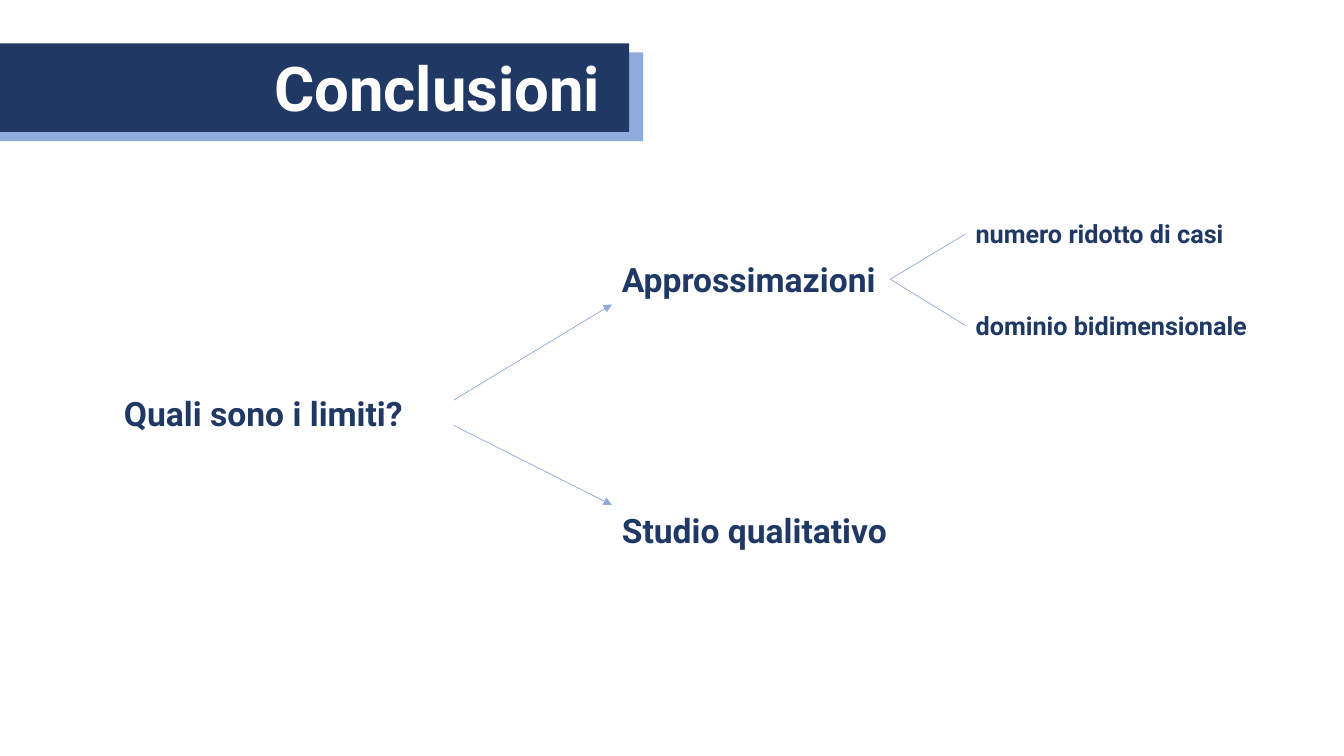
from dataclasses import dataclass

from lxml import etree
from pptx import Presentation
from pptx import util as u
from pptx.dml.color import RGBColor
from pptx.enum import shapes, text
from pptx.oxml import ns
from pptx.shapes.base import BaseShape
from pptx.slide import Slide

SLIDE_W, SLIDE_H = u.Inches(13.33), u.Inches(7.5)


@dataclass(frozen=True)
class Theme:
    font: str = "Roboto"
    navy: RGBColor = RGBColor(0x20, 0x38, 0x64)
    sky: RGBColor = RGBColor(0x8F, 0xAA, 0xDC)
    white: RGBColor = RGBColor(0xFF, 0xFF, 0xFF)
    title_size: int = 44
    topic_size: int = 24
    detail_size: int = 18
    line_width: float = 0.5


THEME = Theme()


@dataclass(frozen=True)
class Point:
    x: float
    y: float


@dataclass(frozen=True)
class Box:
    x: float
    y: float
    w: float
    h: float

    @property
    def middle_left(self) -> Point:
        return Point(self.x, self.y + self.h / 2)

    @property
    def middle_right(self) -> Point:
        return Point(self.x + self.w, self.y + self.h / 2)


@dataclass(frozen=True)
class Bar:
    box: Box
    color: RGBColor


@dataclass(frozen=True)
class Label:
    words: str
    box: Box
    size: int


@dataclass(frozen=True)
class Link:
    start: Point
    end: Point
    arrow: bool = False


def across(share: float) -> int:
    return round(SLIDE_W * share / 100)


def down(share: float) -> int:
    return round(SLIDE_H * share / 100)


def place(sp: BaseShape, box: Box) -> None:
    sp.left, sp.top = across(box.x), down(box.y)
    sp.width, sp.height = across(box.w), down(box.h)


def write(sp: BaseShape, words: str, size: int, color: RGBColor, wrap: bool) -> None:
    tf = sp.text_frame
    tf.text = words
    tf.word_wrap = wrap
    tf.auto_size = text.MSO_AUTO_SIZE.SHAPE_TO_FIT_TEXT
    tf.vertical_anchor = text.MSO_ANCHOR.TOP
    p = tf.paragraphs[0]
    p.alignment = text.PP_ALIGN.LEFT
    p.line_spacing = 1.0
    p.space_before = u.Pt(0)
    font = p.runs[0].font
    font.name, font.size, font.bold = THEME.font, u.Pt(size), True
    font.color.rgb = color


def draw_bar(s: Slide, bar: Bar) -> None:
    sp = s.shapes.add_shape(shapes.MSO_SHAPE.RECTANGLE, 0, 0, 0, 0)
    place(sp, bar.box)
    sp.shadow.inherit = False
    sp.fill.solid()
    sp.fill.fore_color.rgb = bar.color
    sp.line.fill.background()


def draw_title(s: Slide, label: Label) -> None:
    sp = s.shapes.title
    place(sp, label.box)
    write(sp, label.words, label.size, THEME.white, wrap=True)
    sp.element.getparent().append(sp.element)


def draw_label(s: Slide, label: Label) -> None:
    sp = s.shapes.add_textbox(0, 0, 0, 0)
    write(sp, label.words, label.size, THEME.navy, wrap=False)
    place(sp, label.box)


def draw_link(s: Slide, link: Link) -> None:
    cxn = s.shapes.add_connector(
        shapes.MSO_CONNECTOR.STRAIGHT,
        across(link.start.x), down(link.start.y),
        across(link.end.x), down(link.end.y),
    )
    cxn.line.color.rgb = THEME.sky
    cxn.line.width = u.Pt(THEME.line_width)
    props = cxn.element.spPr
    if link.arrow:
        etree.SubElement(props.find(ns.qn("a:ln")), ns.qn("a:tailEnd"), type="triangle")
    etree.SubElement(props, ns.qn("a:effectLst"))


TOPIC_X, DETAIL_X, FORK_X = 45.53, 71.85, 33.75
TOPIC_H, DETAIL_H, BAR_H = 6.67, 5.33, 11.73

BARS = [
    Bar(Box(0, 6.93, 47.86, BAR_H), THEME.sky),
    Bar(Box(0, 5.73, 46.81, BAR_H), THEME.navy),
]
TITLE = Label("Conclusioni", Box(19.65, 6, 27.16, 11.2), THEME.title_size)
QUESTION = Label("Quali sono i limiti?", Box(8.48, 51.33, 22.5, TOPIC_H), THEME.topic_size)
APPROXIMATIONS = Label("Approssimazioni", Box(TOPIC_X, 33.6, 20.7, TOPIC_H), THEME.topic_size)
QUALITATIVE = Label("Studio qualitativo", Box(TOPIC_X, 66.8, 21.45, TOPIC_H), THEME.topic_size)
DETAILS = [
    Label("numero ridotto di casi", Box(DETAIL_X, 28.27, 20.18, DETAIL_H), THEME.detail_size),
    Label("dominio bidimensionale", Box(DETAIL_X, 40.4, 21.9, DETAIL_H), THEME.detail_size),
]
LINKS = [
    Link(Point(FORK_X, 52.93), Point(TOPIC_X, APPROXIMATIONS.box.y + TOPIC_H), arrow=True),
    Link(Point(FORK_X, 56.27), Point(TOPIC_X, QUALITATIVE.box.y), arrow=True),
    *(Link(APPROXIMATIONS.box.middle_right, d.box.middle_left) for d in DETAILS),
]


def main() -> None:
    prs = Presentation()
    prs.slide_width, prs.slide_height = SLIDE_W, SLIDE_H
    s = prs.slides.add_slide(prs.slide_layouts.get_by_name("Title Only"))
    for bar in BARS:
        draw_bar(s, bar)
    draw_title(s, TITLE)
    for label in (QUESTION, APPROXIMATIONS, QUALITATIVE, *DETAILS):
        draw_label(s, label)
    for link in LINKS:
        draw_link(s, link)
    prs.save("out.pptx")


if __name__ == "__main__":
    main()
